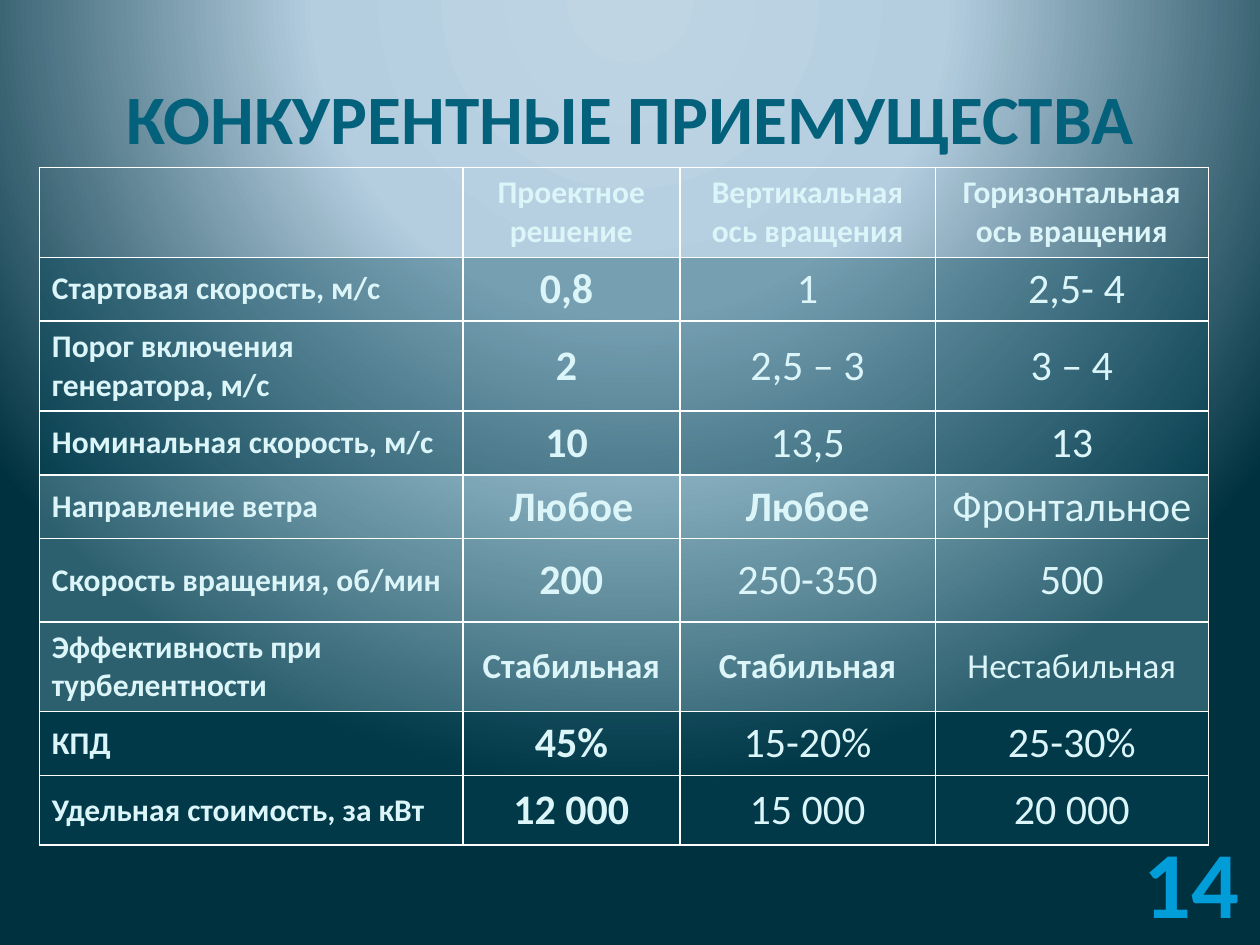
import lxml.etree
import pptx
import pptx.dml.color
import pptx.enum.text
import pptx.oxml
import pptx.oxml.ns
import pptx.util

Pt = pptx.util.Pt
ALIGN = pptx.enum.text.PP_ALIGN
MIDDLE = pptx.enum.text.MSO_ANCHOR.MIDDLE
NAMESPACE = pptx.oxml.ns.nsdecls("a")

FONT = "Calibri"
TEXT, TITLE, NUMBER, BORDER = "DBF5F9", "04617B", "009DD9", "FFFFFF"
DARK, LIGHT = ("03495C", 35), ("B5EDFD", 25)  # colour, opacity in percent

BACKGROUND_STOPS = [(0, "BFD5E4"), (40, "B4CEE0"), (100, "00313F")]
COLUMN_WIDTHS = [242, 124, 146, 156]
HEADERS = ["", "Проектное решение", "Вертикальная ось вращения",
           "Горизонтальная ось вращения"]
# Row height, fill, value size, number of bold value columns, texts
ROWS = [
    (36.5, DARK, 24, 1, ["Стартовая скорость, м/c", "0,8 ", "1", " 2,5- 4"]),
    (51.4, DARK, 24, 1, ["Порог включения генератора, м/c", "2 ", "2,5 – 3", "3 – 4"]),
    (36.5, DARK, 24, 1, ["Номинальная скорость, м/c", "10 ", "13,5", "13"]),
    (36.5, LIGHT, 24, 2, ["Направление ветра", "Любое", "Любое", "Фронтальное"]),
    (47.5, LIGHT, 24, 1, ["Скорость вращения, об/мин", "200", "250-350", "500"]),
    (51.4, LIGHT, 20, 2, ["Эффективность при турбелентности", "Стабильная",
                          "Стабильная", "Нестабильная"]),
    (36.5, DARK, 24, 1, ["КПД", "45%", "15-20%", "25-30%"]),
    (39.6, DARK, 24, 1, ["Удельная стоимость, за кВт", "12 000", "15 000", "20 000"]),
]


def rgb(color):
    return pptx.dml.color.RGBColor.from_string(color)


def write_text(frame, text, size=18, color=TEXT, bold=True, align=ALIGN.CENTER):
    paragraph = frame.paragraphs[0]
    paragraph.alignment = align
    run = paragraph.add_run()
    run.text = text
    run.font.name = FONT
    run.font.size = Pt(size)
    run.font.bold = bold
    run.font.color.rgb = rgb(color)


def set_background(slide):
    slide.background.fill.gradient()
    old = slide.element.find(".//" + pptx.oxml.ns.qn("a:gradFill"))
    stops = "".join(
        f'<a:gs pos="{position * 1000}"><a:srgbClr val="{color}"/></a:gs>'
        for position, color in BACKGROUND_STOPS)
    new = pptx.oxml.parse_xml(
        f'<a:gradFill {NAMESPACE} rotWithShape="1"><a:gsLst>{stops}</a:gsLst>'
        '<a:path path="circle"><a:fillToRect l="50000" t="-80000" r="50000" '
        'b="180000"/></a:path></a:gradFill>')
    old.getparent().replace(old, new)


def set_borders(cell):
    properties = cell._tc.get_or_add_tcPr()
    for index, side in enumerate(("lnL", "lnR", "lnT", "lnB")):
        # Borders come before the fill in the cell properties
        properties.insert(index, pptx.oxml.parse_xml(
            f'<a:{side} {NAMESPACE} w="{Pt(1)}"><a:solidFill>'
            f'<a:srgbClr val="{BORDER}"/></a:solidFill></a:{side}>'))


def set_fill(cell, fill):
    if fill is None:
        cell.fill.background()
        return
    color, opacity = fill
    cell.fill.solid()
    cell.fill.fore_color.rgb = rgb(color)
    node = cell._tc.tcPr.find(".//" + pptx.oxml.ns.qn("a:srgbClr"))
    lxml.etree.SubElement(node, pptx.oxml.ns.qn("a:alpha"), val=str(opacity * 1000))


def format_cell(cell, text, fill=None, **text_format):
    cell.vertical_anchor = MIDDLE
    set_fill(cell, fill)
    set_borders(cell)
    if text:
        write_text(cell.text_frame, text, **text_format)


def add_title(slide, text):
    title = slide.shapes.title
    title.left, title.top, title.width, title.height = Pt(36), Pt(21.6), Pt(648), Pt(90)
    frame = title.text_frame
    frame.auto_size = pptx.enum.text.MSO_AUTO_SIZE.NONE
    frame.vertical_anchor = MIDDLE
    write_text(frame, text, size=39.6, color=TITLE)


def add_comparison_table(slide):
    heights = [51.4] + [row[0] for row in ROWS]
    table = slide.shapes.add_table(
        len(heights), len(COLUMN_WIDTHS), Pt(22.5), Pt(95.6),
        Pt(sum(COLUMN_WIDTHS)), Pt(sum(heights))).table
    table.first_row = table.horz_banding = False
    for column, width in zip(table.columns, COLUMN_WIDTHS):
        column.width = Pt(width)
    for row, height in zip(table.rows, heights):
        row.height = Pt(height)

    for column, text in enumerate(HEADERS):
        format_cell(table.cell(0, column), text)
    for row, (_, fill, size, bold_count, texts) in enumerate(ROWS, start=1):
        format_cell(table.cell(row, 0), texts[0], fill, align=ALIGN.LEFT)
        for column, text in enumerate(texts[1:], start=1):
            format_cell(table.cell(row, column), text, fill,
                        size=size, bold=column <= bold_count)


def add_page_number(slide, text):
    box = slide.shapes.add_textbox(Pt(641.5), Pt(467.3), Pt(78.5), Pt(72.7))
    box.text_frame.word_wrap = False
    write_text(box.text_frame, text, size=54, color=NUMBER)


def main():
    presentation = pptx.Presentation()
    presentation.slide_width, presentation.slide_height = Pt(720), Pt(540)
    slide = presentation.slides.add_slide(presentation.slide_layouts[5])
    set_background(slide)
    add_page_number(slide, "14")
    add_title(slide, "КОНКУРЕНТНЫЕ ПРИЕМУЩЕСТВА")
    add_comparison_table(slide)
    presentation.save("out.pptx")


if __name__ == "__main__":
    main()
